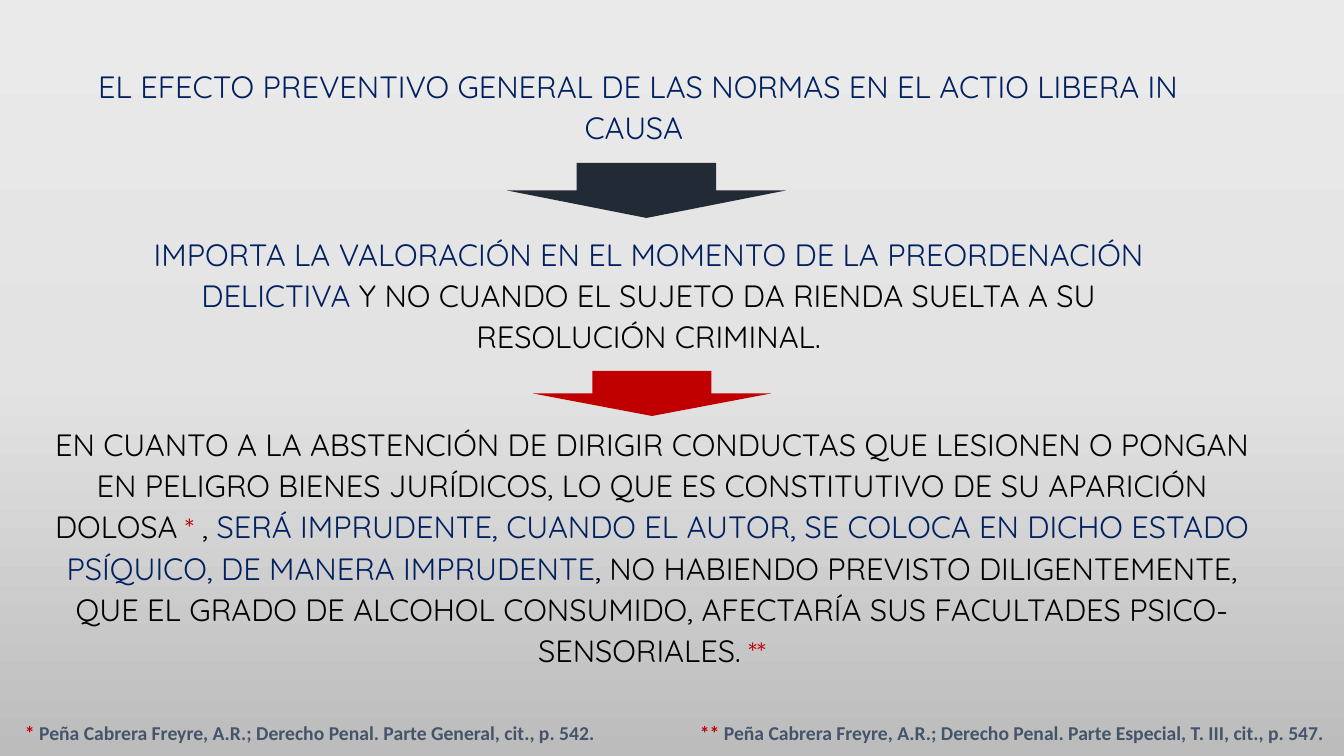
"""Builds a slide on the preventive effect of norms in the actio libera in causa."""
from copy import deepcopy

from pptx import Presentation
from pptx.dml.color import RGBColor
from pptx.enum.shapes import MSO_SHAPE
from pptx.enum.text import PP_ALIGN
from pptx.oxml.ns import qn
from pptx.util import Pt

DOWN_ARROW = MSO_SHAPE.DOWN_ARROW
CENTER = PP_ALIGN.CENTER
JUSTIFY = PP_ALIGN.JUSTIFY

WIDTH, HEIGHT = 1344, 756
EMU_PER_PX = 12192000 / WIDTH
COLORS = {
    "navy": "002060",
    "black": "000000",
    "red": "C00000",
    "slate": "44546A",
    "charcoal": "222A35",
}
BACKDROP = [(0, "EBEAEA"), (0.5, "E4E3E3"), (1, "BDBCBC")]


def px(length):
    return round(length * EMU_PER_PX)


class SlideBuilder:
    """Holds the text styles and the slide being built."""

    body = {"font": "Quicksand", "size": 22, "bold": False, "align": CENTER, "spacing": 1.12}
    note = {"font": "Calibri", "size": 14, "bold": True, "align": JUSTIFY, "spacing": 1.5}

    def __init__(self, slide):
        self.slide = slide

    def background(self, stops):
        fill = self.slide.background.fill
        fill.gradient()
        fill.gradient_angle = 270
        stop_list = next(self.slide.element.iter(qn("a:gsLst")))
        stop_list.insert(1, deepcopy(stop_list[0]))
        for stop, (position, color) in zip(fill.gradient_stops, stops):
            stop.position = position
            stop.color.rgb = RGBColor.from_string(color)

    def arrow(self, box, color):
        arrow = self.slide.shapes.add_shape(DOWN_ARROW, *map(px, box))
        arrow.shadow.inherit = False
        arrow.fill.solid()
        arrow.fill.fore_color.rgb = RGBColor.from_string(COLORS[color])
        arrow.line.fill.background()

    def text(self, box, style, parts):
        frame = self.slide.shapes.add_textbox(*map(px, box)).text_frame
        frame.word_wrap = True
        paragraph = frame.paragraphs[0]
        paragraph.alignment = style["align"]
        paragraph.line_spacing = style["spacing"]
        for words, color, *size in parts:
            run = paragraph.add_run()
            run.text = words
            run.font.name = style["font"]
            run.font.size = Pt(size[0] if size else style["size"])
            run.font.bold = style["bold"]
            run.font.color.rgb = RGBColor.from_string(COLORS[color])

    def footnote(self, left, width, mark, source):
        self.text((left, 704, width, 50), self.note, [(mark, "red"), (source, "slate")])


def main():
    deck = Presentation()
    deck.slide_width, deck.slide_height = px(WIDTH), px(HEIGHT)
    builder = SlideBuilder(deck.slides.add_slide(deck.slide_layouts[6]))
    builder.background(BACKDROP)

    builder.text((80, 58, 1116, 123), builder.body, [
        ("EL EFECTO PREVENTIVO GENERAL DE LAS NORMAS EN EL ACTIO LIBERA IN CAUSA ", "navy"),
    ])
    builder.arrow((507, 163, 279, 55), "charcoal")
    builder.text((101, 226, 1095, 123), builder.body, [
        ("IMPORTA LA VALORACIÓN EN EL MOMENTO DE LA PREORDENACIÓN DELICTIVA", "navy"),
        (" Y NO CUANDO EL SUJETO DA RIENDA SUELTA A SU RESOLUCIÓN CRIMINAL.", "black"),
    ])
    builder.arrow((533, 371, 238, 45), "red")
    builder.text((37, 416, 1230, 245), builder.body, [
        ("EN CUANTO A LA ABSTENCIÓN DE DIRIGIR CONDUCTAS QUE LESIONEN O PONGAN EN PELIGRO "
         "BIENES JURÍDICOS, LO QUE ES CONSTITUTIVO DE SU APARICIÓN DOLOSA", "black"),
        (" *", "red", 20),
        (" , ", "black"),
        ("SERÁ IMPRUDENTE, CUANDO EL AUTOR, SE COLOCA EN DICHO ESTADO PSÍQUICO, "
         "DE MANERA IMPRUDENTE", "navy"),
        (", NO HABIENDO PREVISTO DILIGENTEMENTE, QUE EL GRADO DE ALCOHOL CONSUMIDO, "
         "AFECTARÍA SUS FACULTADES PSICO-SENSORIALES.", "black"),
        (" **", "red", 20),
    ])

    builder.footnote(15, 660, "* ",
                     "Peña Cabrera Freyre, A.R.; Derecho Penal. Parte General, cit., p. 542. ")
    builder.footnote(690, 654, "** ",
                     "Peña Cabrera Freyre, A.R.; Derecho Penal. Parte Especial, T. III, cit., p. 547. ")
    deck.save("out.pptx")


if __name__ == "__main__":
    main()
